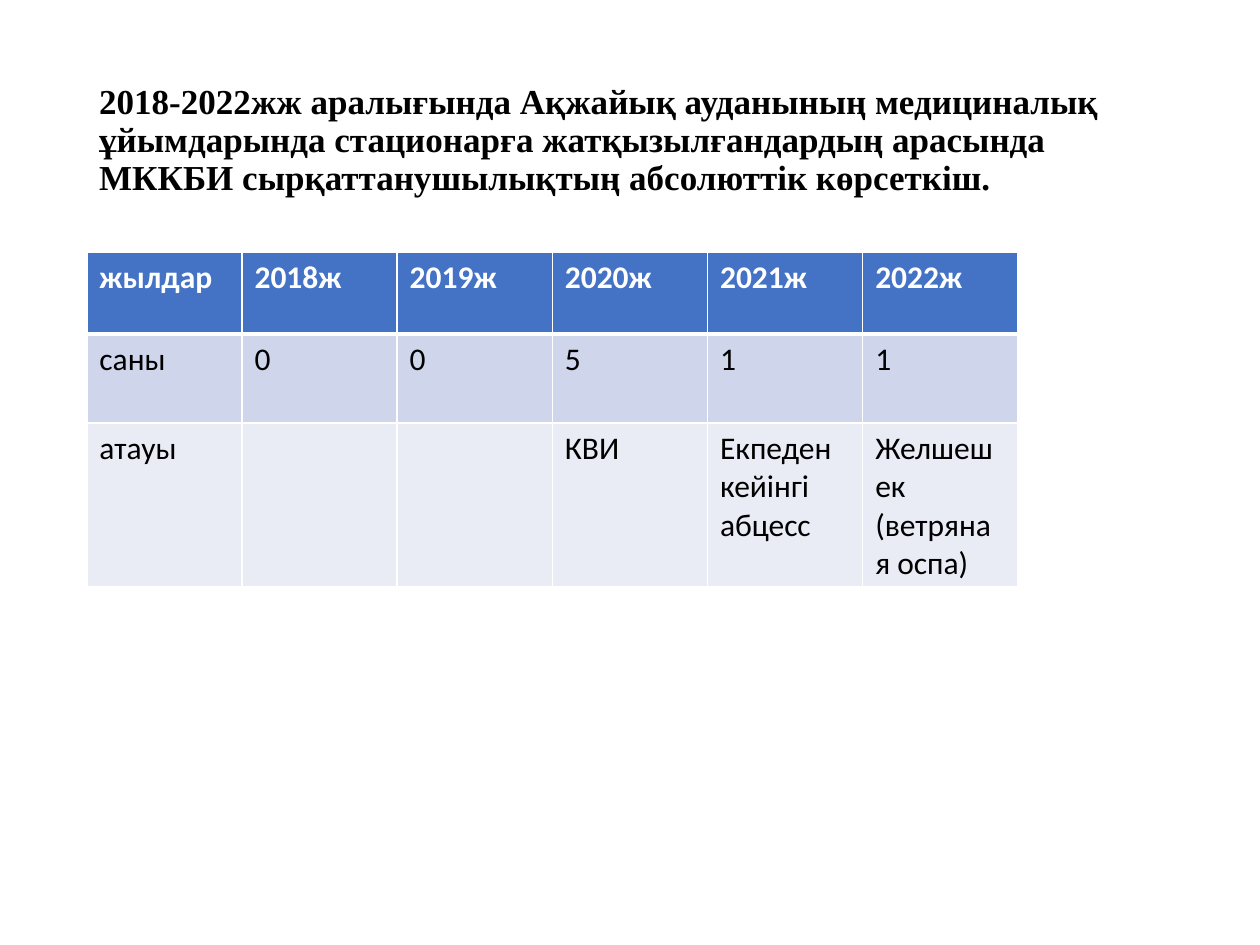
from dataclasses import dataclass

from lxml import etree
from pptx import Presentation
from pptx.dml.color import RGBColor
from pptx.enum.text import MSO_ANCHOR
from pptx.oxml.ns import qn
from pptx.util import Cm, Pt

MIDDLE = MSO_ANCHOR.MIDDLE
BLANK_LAYOUT = 6


@dataclass(frozen=True)
class Theme:
    title_font: str = "Times New Roman"
    body_font: str = "Calibri"
    title_size: int = 20
    body_size: int = 18
    text: str = "000000"
    white: str = "FFFFFF"
    header: str = "4472C4"
    bands: tuple = ("CFD5EA", "E9EBF5")
    rule: int = 1
    header_rule: int = 3


THEME = Theme()

TITLE = (
    "2018-2022жж аралығында Ақжайық ауданының медициналық ұйымдарында "
    "стационарға жатқызылғандардың арасында МККБИ сырқаттанушылықтың "
    "абсолюттік көрсеткіш."
)
ROWS = [
    ["жылдар", "2018ж", "2019ж", "2020ж", "2021ж", "2022ж"],
    ["саны", "0", "0", "5", "1", "1"],
    ["атауы", "", "", "КВИ", "Екпеден кейінгі абцесс", "Желшешек (ветряная оспа)"],
]
ROW_HEIGHTS = [Cm(1.65), Cm(1.8), Cm(1.04)]


def set_font(p, name, size, color, bold):
    p.font.name = name
    p.font.size = Pt(size)
    p.font.bold = bold
    p.font.color.rgb = RGBColor.from_string(color)


def set_borders(cell, top, bottom):
    """Draw white cell borders; top and bottom are widths in points."""
    tc_pr = cell._tc.get_or_add_tcPr()
    widths = {"a:lnL": THEME.rule, "a:lnR": THEME.rule, "a:lnT": top, "a:lnB": bottom}
    for i, (tag, width) in enumerate(widths.items()):
        ln = etree.Element(qn(tag), w=str(Pt(width)))
        fill = etree.SubElement(ln, qn("a:solidFill"))
        etree.SubElement(fill, qn("a:srgbClr"), val=THEME.white)
        tc_pr.insert(i, ln)


def add_title(slide, left, top, width, height):
    tf = slide.shapes.add_textbox(left, top, width, height).text_frame
    tf.word_wrap = True
    tf.vertical_anchor = MIDDLE
    p = tf.paragraphs[0]
    p.text = TITLE
    p.line_spacing = 0.9
    set_font(p, THEME.title_font, THEME.title_size, THEME.text, True)


def add_cases_table(slide, left, top, width):
    table = slide.shapes.add_table(
        len(ROWS), len(ROWS[0]), left, top, width, sum(ROW_HEIGHTS)
    ).table
    for r, (values, height) in enumerate(zip(ROWS, ROW_HEIGHTS)):
        table.rows[r].height = height
        is_header = r == 0
        fill = THEME.header if is_header else THEME.bands[(r - 1) % 2]
        color = THEME.white if is_header else THEME.text
        above = THEME.header_rule if r == 1 else THEME.rule
        below = THEME.header_rule if is_header else THEME.rule
        for c, value in enumerate(values):
            cell = table.cell(r, c)
            cell.text = value
            cell.fill.solid()
            cell.fill.fore_color.rgb = RGBColor.from_string(fill)
            set_borders(cell, above, below)
            p = cell.text_frame.paragraphs[0]
            set_font(p, THEME.body_font, THEME.body_size, color, is_header)


def main():
    prs = Presentation()
    prs.slide_width, prs.slide_height = Cm(25.4), Cm(19.05)
    slide = prs.slides.add_slide(prs.slide_layouts[BLANK_LAYOUT])
    left = Cm(1.75)
    add_title(slide, left, Cm(1.01), Cm(21.9), Cm(3.68))
    add_cases_table(slide, left, Cm(5.08), Cm(18.77))
    prs.save("out.pptx")


if __name__ == "__main__":
    main()
